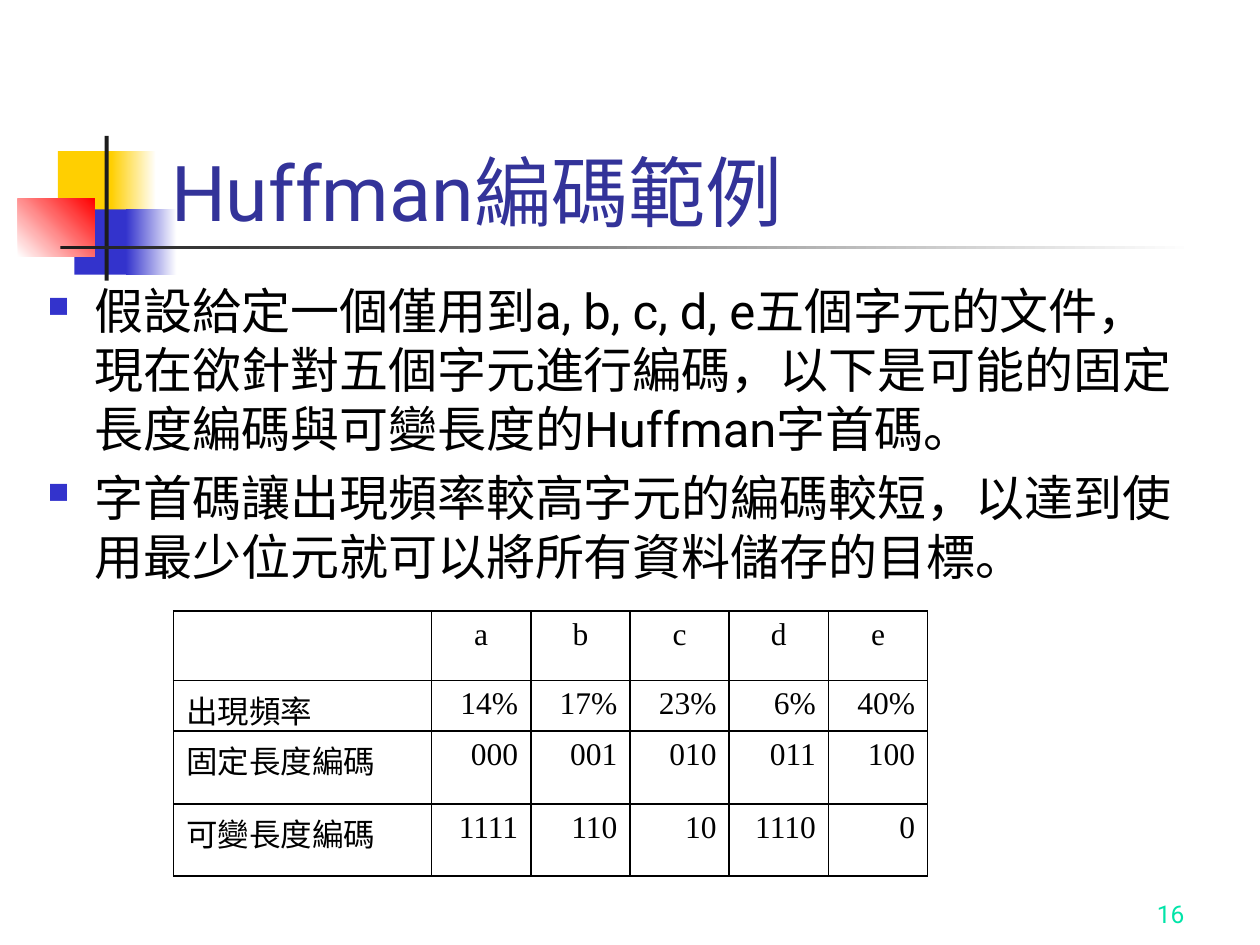
from lxml import etree
from pptx import Presentation
from pptx.dml.color import RGBColor
from pptx.enum.shapes import MSO_SHAPE as Shape
from pptx.enum.text import MSO_ANCHOR as Anchor, PP_ALIGN as Align
from pptx.oxml.ns import qn
from pptx.util import Cm, Pt

BLACK = RGBColor(0x00, 0x00, 0x00)
WHITE = RGBColor(0xFF, 0xFF, 0xFF)
YELLOW = RGBColor(0xFF, 0xCF, 0x01)
BLUE = RGBColor(0x33, 0x33, 0xCC)
RED = RGBColor(0xFF, 0x00, 0x00)
DARK = RGBColor(0x1C, 0x1C, 0x1C)
TITLE_BLUE = RGBColor(0x33, 0x33, 0x99)
GREEN = RGBColor(0x00, 0xE4, 0xA8)

INDENT = Cm(0.95)
TITLE_FONT = {"name": "Roboto", "size": Pt(44)}
BODY_FONT = {"name": "Roboto", "size": Pt(28)}
NUMBER_FONT = {"name": "Roboto", "size": Pt(14)}
TABLE_FONT = {"name": "Times New Roman", "size": Pt(18)}

# Left, top, width, height in cm, then start colour, end colour, angle
DECORATION = [
    (1.17, 3.05, 1.22, 1.32, YELLOW, None, 0),
    (2.24, 3.05, 0.91, 1.32, YELLOW, WHITE, 0),
    (1.5, 4.22, 1.17, 1.32, BLUE, None, 0),
    (2.54, 4.22, 1.02, 1.32, BLUE, WHITE, 0),
    (0.36, 4.01, 1.55, 1.17, WHITE, RED, 45),
    (2.11, 2.74, 0.08, 2.92, DARK, None, 0),
    (1.22, 4.95, 22.86, 0.08, DARK, WHITE, 0),
]
BULLETS = [
    "假設給定一個僅用到a, b, c, d, e五個字元的文件，現在欲針對五個字元進行編碼，"
    "以下是可能的固定長度編碼與可變長度的Huffman字首碼。",
    "字首碼讓出現頻率較高字元的編碼較短，以達到使用最少位元就可以將所有資料儲存的目標。",
]
ROWS = [
    ["", "a", "b", "c", "d", "e"],
    ["出現頻率", "14%", "17%", "23%", "6%", "40%"],
    ["固定長度編碼", "000", "001", "010", "011", "100"],
    ["可變長度編碼", "1111", "110", "10", "1110", "0"],
]
COL_WIDTHS = [5.2] + [2.0] * 5
ROW_HEIGHTS = [1.4, 0.81, 1.47, 1.45]


def add_block(slide, left, top, width, height, start, end, angle):
    s = slide.shapes.add_shape(Shape.RECTANGLE, Cm(left), Cm(top), Cm(width), Cm(height))
    s.shadow.inherit = False
    s.line.fill.background()
    if end is None:
        s.fill.solid()
        s.fill.fore_color.rgb = start
        return
    s.fill.gradient()
    s.fill.gradient_angle = angle
    for stop, position, color in zip(s.fill.gradient_stops, (0, 1), (start, end)):
        stop.position = position
        stop.color.rgb = color


def write(p, text, font, color, align=Align.LEFT):
    p.alignment = align
    r = p.add_run()
    r.text = text
    for key, value in font.items():
        setattr(r.font, key, value)
    r.font.color.rgb = color


def hang(p):
    pPr = p._p.get_or_add_pPr()
    pPr.set("marL", str(INDENT))
    pPr.set("indent", str(-INDENT))
    return pPr


def add_bullet(p):
    pPr = hang(p)
    color = etree.SubElement(pPr, qn("a:buClr"))
    etree.SubElement(color, qn("a:srgbClr"), val=str(BLUE))
    etree.SubElement(pPr, qn("a:buSzPct"), val="60000")
    etree.SubElement(pPr, qn("a:buChar"), char="■")


def add_text(slide, box, paragraphs, font, color, anchor=Anchor.TOP,
             align=Align.LEFT, bulleted=False):
    tf = slide.shapes.add_textbox(*map(Cm, box)).text_frame
    tf.word_wrap = True
    tf.vertical_anchor = anchor
    for i, text in enumerate(paragraphs):
        p = tf.add_paragraph() if i else tf.paragraphs[0]
        write(p, text, font, color, align)
        if bulleted:
            p.space_before = Pt(5.6)
            add_bullet(p)


def add_borders(cell):
    tcPr = cell._tc.get_or_add_tcPr()
    for i, side in enumerate(("lnL", "lnR", "lnT", "lnB")):
        line = etree.Element(qn(f"a:{side}"), w=str(Pt(1)))
        fill = etree.SubElement(line, qn("a:solidFill"))
        etree.SubElement(fill, qn("a:srgbClr"), val=str(BLACK))
        tcPr.insert(i, line)


def add_code_table(slide, left, top):
    frame = slide.shapes.add_table(len(ROWS), len(COL_WIDTHS), Cm(left), Cm(top),
                                   Cm(sum(COL_WIDTHS)), Cm(sum(ROW_HEIGHTS)))
    table = frame.table
    table.first_row = table.horz_banding = False
    for column, width in zip(table.columns, COL_WIDTHS):
        column.width = Cm(width)
    for row, height in zip(table.rows, ROW_HEIGHTS):
        row.height = Cm(height)
    for i, values in enumerate(ROWS):
        for j, text in enumerate(values):
            cell = table.cell(i, j)
            cell.fill.background()
            add_borders(cell)
            if text:
                p = cell.text_frame.paragraphs[0]
                align = Align.CENTER if i == 0 else Align.RIGHT if j else Align.LEFT
                write(p, text, TABLE_FONT, BLACK, align)
                hang(p)


def main():
    prs = Presentation()
    prs.slide_width, prs.slide_height = Cm(25.4), Cm(19.05)
    slide = prs.slides.add_slide(prs.slide_layouts[6])

    # Coloured squares and rules beside the title
    for block in DECORATION:
        add_block(slide, *block)

    # Title and bullets
    add_text(slide, (3.2, 1.73, 21.64, 3.18), ["Huffman編碼範例"],
             TITLE_FONT, TITLE_BLUE, Anchor.BOTTOM)
    add_text(slide, (0.71, 5.54, 23.6, 3.18), BULLETS, BODY_FONT, BLACK, bulleted=True)

    # Code table
    add_code_table(slide, 3.5, 12.32)

    # Slide number
    add_text(slide, (18.85, 17.58, 5.28, 1.27), ["16"],
             NUMBER_FONT, GREEN, Anchor.BOTTOM, Align.RIGHT)

    prs.save("out.pptx")


if __name__ == "__main__":
    main()
